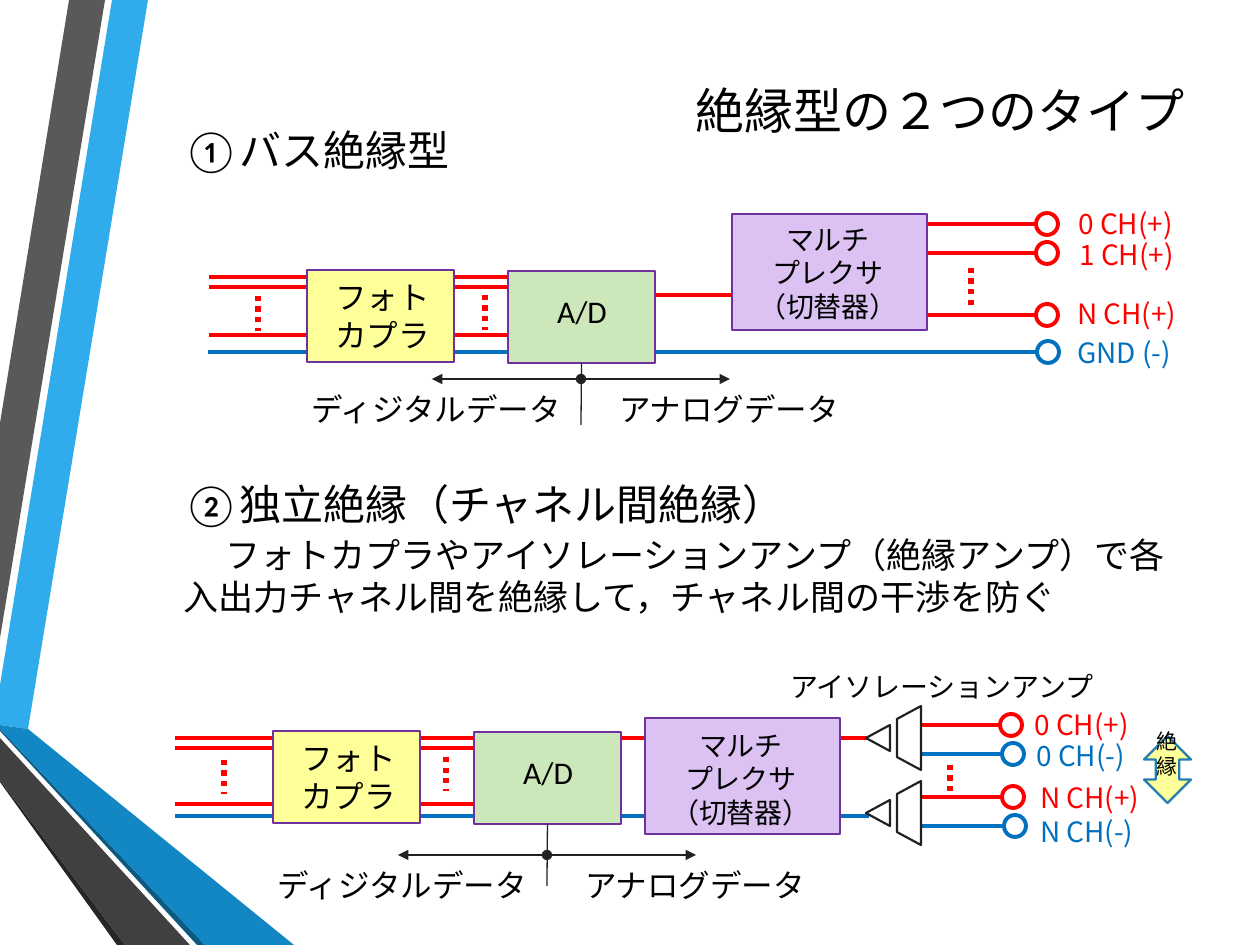
from lxml import etree
from pptx import Presentation
from pptx import util as u
from pptx.dml.color import RGBColor
from pptx.enum import dml, shapes, text
from pptx.oxml.ns import qn

PX = u.Inches(1) / 126
RED, BLUE, INK, BLACK, WHITE = "FF0000", "0070C0", "212121", "000000", "FFFFFF"
YELLOW, GREEN, LILAC, PURPLE = "FFFF99", "CCE7B9", "DBC2F3", "7030A0"
KIND = shapes.MSO_SHAPE
LEFT, CENTER, RIGHT = text.PP_ALIGN.LEFT, text.PP_ALIGN.CENTER, text.PP_ALIGN.RIGHT
RIBBONS = [
    ("30ACEC", [(0, 685), (0, 725), (28, 729), (148, 0), (112, 0)]),
    ("595959", [(105, 0), (69, 0), (0, 423), (0, 638)]),
    ("262626", [(0, 780), (0, 782), (117, 945), (125, 945)]),
    ("0C5A82", [(0, 729), (0, 731), (197, 945), (205, 945)]),
    ("1287C3", [(0, 729), (205, 945), (294, 945), (28, 729), (0, 725)]),
    ("404040", [(0, 780), (125, 945), (190, 945), (0, 738)]),
]


def px(*values):
    """Turn pixel lengths into EMU."""
    return [u.Emu(round(value * PX)) for value in values]


def color(code):
    """Turn a hex string into a colour."""
    return RGBColor.from_string(code)


def add_ribbon(page, fill, points):
    """Draw a filled polygon without an outline."""
    builder = page.shapes.build_freeform(*points[0], scale=PX)
    builder.add_line_segments(points[1:], close=True)
    ribbon = builder.convert_to_shape()
    ribbon.shadow.inherit = False
    ribbon.fill.solid()
    ribbon.fill.fore_color.rgb = color(fill)
    ribbon.line.fill.background()


def add_part(page, kind, frame, fill, line=PURPLE, width=1.25, turn=0):
    """Draw a filled and outlined preset shape."""
    part = page.shapes.add_shape(kind, *px(*frame))
    part.shadow.inherit = False
    part.fill.solid()
    part.fill.fore_color.rgb = color(fill)
    part.line.color.rgb = color(line)
    part.line.width = u.Pt(width)
    part.rotation = turn
    return part


def add_line(page, start, end, line=RED, width=2.25, head=None, tail=None):
    """Draw a straight line with optional arrowheads."""
    wire = page.shapes.add_connector(shapes.MSO_CONNECTOR.STRAIGHT, *px(*start, *end))
    wire.line.color.rgb = color(line)
    wire.line.width = u.Pt(width)
    for tag, shape in (("a:headEnd", head), ("a:tailEnd", tail)):
        if shape:
            etree.SubElement(wire.line._get_or_add_ln(), qn(tag), type=shape)
    etree.SubElement(wire._element.spPr, qn("a:effectLst"))
    return wire


def add_dots(page, x, top, bottom):
    """Draw a vertical row of red dots."""
    dots = add_line(page, (x, top), (x, bottom), width=3)
    dots.line.dash_style = dml.MSO_LINE.ROUND_DOT


def add_text(page, frame, lines, size, align=CENTER, font="Calibri", ink=BLACK):
    """Write one paragraph for each line in a text box."""
    box = page.shapes.add_textbox(*px(*frame))
    box.text_frame.word_wrap = True
    box.text_frame.text = "\n".join(lines)
    for para in box.text_frame.paragraphs:
        para.alignment = align
        para.font.name = font
        para.font.size = u.Pt(size)
        para.font.color.rgb = color(ink)
        face = para._p.pPr.find(qn("a:defRPr"))
        etree.SubElement(face, qn("a:ea"), typeface=font)
    return box


def add_terminal(page, start, x, y, ink):
    """Draw a wire that ends in a round terminal."""
    add_line(page, (start, y), (x, y), ink)
    add_part(page, KIND.OVAL, (x - 11, y - 11, 22, 22), WHITE, ink, 2.25)


def add_channel(page, x, y, name, ink):
    """Write the name of a channel."""
    add_text(page, (x, y, 139, 47), [name], 16, LEFT, "Noto Sans CJK JP", ink)


def add_converter(page, left, top, axis):
    """Draw the photocoupler, the A/D stage and the data axis below them."""
    stage = add_part(page, KIND.RECTANGLE, (left + 201, top + 1, 147, 92), GREEN)
    add_part(page, KIND.RECTANGLE, (left, top, 147, 92), YELLOW)
    add_text(page, (left + 222, top + 16, 106, 50), ["A/D"], 18)
    add_text(page, (left, top + 2, 151, 89), ["フォト", "カプラ"], 18)
    middle = left + 274
    border = add_line(page, (middle, top + 93), (middle, top + 155), INK, 0.75)
    border.begin_connect(stage, 2)
    add_line(page, (middle, axis), (middle + 149, axis), INK, 0.75, "oval", "triangle")
    add_line(page, (middle, axis), (middle - 149, axis), INK, 0.75, tail="triangle")
    for x, name in ((left - 19, "ディジタルデータ"), (middle, "アナログデータ")):
        add_text(page, (x, axis + 5, 296, 50), [name], 18)


def add_multiplexer(page, left, top, drop):
    """Draw the multiplexer with its name."""
    add_part(page, KIND.RECTANGLE, (left, top, 195, 116), LILAC)
    lines = ["マルチ", "プレクサ", "（切替器）"]
    add_text(page, (left + 13, top + drop, 166, 115), lines, 16)


def add_amplifier(page, y):
    """Draw an isolation amplifier centred on a height."""
    add_part(page, KIND.ISOSCELES_TRIANGLE, (865, y - 12, 26, 24), WHITE, INK, turn=270)
    output = add_part(page, KIND.TRAPEZOID, (877, y - 12, 64, 24), WHITE, INK, turn=270)
    output.adjustments[0] = 0.54


def add_bus_type(page):
    """Draw the bus isolation circuit."""
    for y in (277, 287, 335):
        add_line(page, (530, y), (209, y))
    add_line(page, (1047, 352), (208, 352), BLUE)
    add_part(page, KIND.OVAL, (1037, 341, 22, 22), WHITE, BLUE, 2.25)
    add_line(page, (756, 295), (611, 295))
    for y in (224, 253, 315):
        add_terminal(page, 900, 1047, y, RED)
    for x, top, bottom in ((258, 296, 331), (485, 295, 330), (971, 268, 309)):
        add_dots(page, x, top, bottom)
    add_converter(page, 307, 270, 379)
    add_multiplexer(page, 732, 214, 2)
    for x, y, name, ink in ((1066, 200, "0 CH(+)", RED), (1067, 231, "1 CH(+)", RED),
                            (1065, 290, "N CH(+)", RED), (1065, 329, "GND (-)", BLUE)):
        add_channel(page, x, y, name, ink)


def add_channel_type(page):
    """Draw the circuit with isolation between channels."""
    for end, y, ink in ((869, 738, RED), (496, 748, RED), (496, 804, RED), (869, 816, BLUE)):
        add_line(page, (end, y), (175, y), ink)
    for x, y, ink in ((1011, 725, RED), (1013, 754, BLUE), (1013, 797, RED), (1015, 826, BLUE)):
        add_terminal(page, 910, x, y, ink)
    for x, top, bottom in ((224, 760, 794), (446, 757, 791), (950, 765, 794)):
        add_dots(page, x, top, bottom)
    add_converter(page, 273, 731, 855)
    add_multiplexer(page, 645, 718, 4)
    for y in (738, 813):
        add_amplifier(page, y)
    for x, y, name, ink in ((1022, 701, "0 CH(+)", RED), (1024, 732, "0 CH(-)", BLUE),
                            (1028, 774, "N CH(+)", RED), (1028, 808, "N CH(-)", BLUE)):
        add_channel(page, x, y, name, ink)
    add_text(page, (772, 663, 340, 47), ["アイソレーションアンプ"], 16)
    add_part(page, KIND.UP_DOWN_ARROW, (1144, 736, 47, 67), YELLOW, "247FAF")
    label = add_text(page, (1139, 722, 55, 96), ["絶縁"], 12)
    label.text_frame._txBody.bodyPr.set("vert", "wordArtVertRtl")


def main():
    """Build the slide and save it."""
    deck = Presentation()
    deck.slide_width, deck.slide_height = px(1260, 945)
    page = deck.slides.add_slide(deck.slide_layouts[6])
    for fill, points in RIBBONS:
        add_ribbon(page, fill, points)
    title = add_text(page, (135, 63, 1062, 93), ["絶縁型の２つのタイプ"], 28, RIGHT)
    title.text_frame.vertical_anchor = text.MSO_ANCHOR.MIDDLE
    add_text(page, (171, 118, 1031, 63), ["①バス絶縁型"], 24, LEFT)
    add_text(page, (171, 472, 1031, 63), ["②独立絶縁（チャネル間絶縁）"], 24, LEFT)
    detail = "フォトカプラやアイソレーションアンプ（絶縁アンプ）で各入出力チャネル間を絶縁して，チャネル間の干渉を防ぐ"
    body = add_text(page, (171, 527, 1031, 102), [detail], 20, LEFT)
    body.text_frame.paragraphs[0]._p.pPr.set("indent", str(px(42)[0]))
    add_bus_type(page)
    add_channel_type(page)
    deck.save("out.pptx")


if __name__ == "__main__":
    main()
